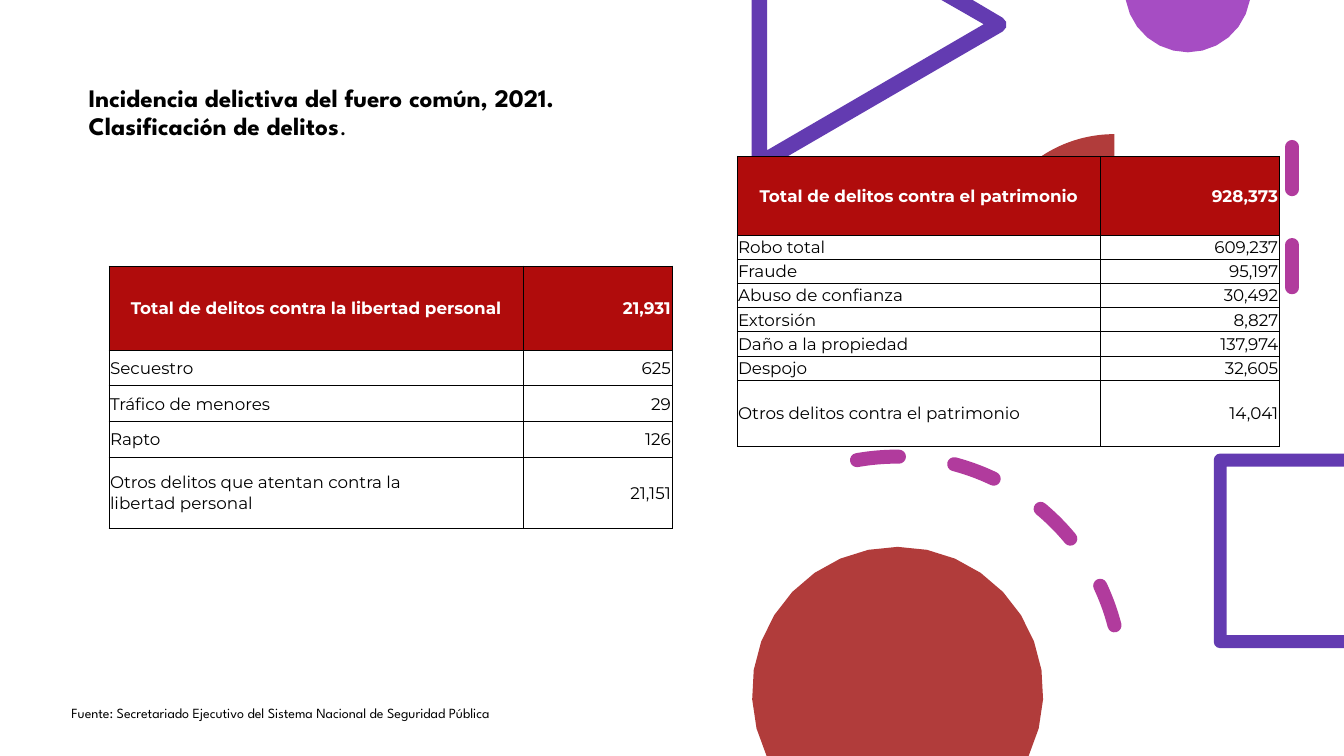
from dataclasses import dataclass
from math import cos, radians, sin

from lxml import etree
from pptx import Presentation
from pptx import util as u
from pptx.dml.color import RGBColor
from pptx.enum import dml, shapes, text
from pptx.oxml import parse_xml
from pptx.oxml.ns import nsdecls, qn

LEFT, CENTER, RIGHT = text.PP_ALIGN.LEFT, text.PP_ALIGN.CENTER, text.PP_ALIGN.RIGHT
NO_BREAK_SPACE = chr(160)


@dataclass(frozen=True)
class Theme:
    black: str = "000000"
    white: str = "FFFFFF"
    header: str = "B00C0C"
    red: str = "B13C3B"
    violet: str = "633BB1"
    lilac: str = "A64DC3"
    magenta: str = "B13B9D"
    heading_font: str = "League Spartan"
    table_font: str = "Montserrat"
    title_size: float = 18
    table_size: float = 12
    source_size: float = 10
    border: float = 0.5
    dash: float = 10


def write(paragraph, content, *, font, size, color, bold=False, align=LEFT):
    paragraph.alignment = align
    run = paragraph.add_run()
    run.text = content
    run.font.name = font
    run.font.size = u.Pt(size)
    run.font.bold = bold
    run.font.color.rgb = RGBColor.from_string(color)


def arc_points(cx, cy, radius, start, end, steps=3):
    angles = [radians(start + (end - start) * i / steps) for i in range(steps + 1)]
    return [(cx + radius * cos(a), cy + radius * sin(a)) for a in angles]


class Page:
    def __init__(self, slide, theme):
        self.slide = slide
        self.theme = theme

    def fill(self, shape, color):
        shape.shadow.inherit = False
        shape.fill.solid()
        shape.fill.fore_color.rgb = RGBColor.from_string(color)
        shape.line.fill.background()

    def outline(self, points, color):
        corners = [(u.Pt(x), u.Pt(y)) for x, y in points]
        builder = self.slide.shapes.build_freeform(*corners[0])
        builder.add_line_segments(corners[1:], close=True)
        self.fill(builder.convert_to_shape(), color)

    def preset(self, kind, left, top, size, rotation):
        shape = self.slide.shapes.add_shape(
            kind, u.Pt(left), u.Pt(top), u.Pt(size), u.Pt(size))
        shape.rotation = rotation
        return shape

    def block_arc(self, left, top, size, rotation, color):
        self.fill(self.preset(shapes.MSO_SHAPE.BLOCK_ARC, left, top, size, rotation), color)

    def dash(self, line):
        line.color.rgb = RGBColor.from_string(self.theme.magenta)
        line.width = u.Pt(self.theme.dash)
        line.dash_style = dml.MSO_LINE.DASH
        line._get_or_add_ln().set("cap", "rnd")

    def dashed_arc(self, left, top, size, rotation):
        curve = self.preset(shapes.MSO_SHAPE.ARC, left, top, size, rotation)
        curve.shadow.inherit = False
        curve.fill.background()
        self.dash(curve.line)

    def dashed_line(self, x1, y1, x2, y2):
        line = self.slide.shapes.add_connector(
            shapes.MSO_CONNECTOR.STRAIGHT, u.Pt(x1), u.Pt(y1), u.Pt(x2), u.Pt(y2))
        self.dash(line.line)
        etree.SubElement(line._element.spPr, qn("a:effectLst"))

    def text_box(self, left, top, width, height, lines, size, spacing=1.0,
                 anchor=text.MSO_ANCHOR.TOP):
        frame = self.slide.shapes.add_textbox(
            u.Pt(left), u.Pt(top), u.Pt(width), u.Pt(height)).text_frame
        frame.word_wrap = True
        frame.vertical_anchor = anchor
        for index, runs in enumerate(lines):
            paragraph = frame.add_paragraph() if index else frame.paragraphs[0]
            paragraph.line_spacing = spacing
            for content, bold in runs:
                write(paragraph, content, font=self.theme.heading_font, size=size,
                      color=self.theme.black, bold=bold)

    def cell(self, cell, content, is_header, align):
        theme = self.theme
        cell.vertical_anchor = text.MSO_ANCHOR.MIDDLE
        cell.margin_left = cell.margin_right = cell.margin_top = u.Pt(0.7)
        cell.margin_bottom = u.Pt(0)
        cell.fill.solid()
        cell.fill.fore_color.rgb = RGBColor.from_string(
            theme.header if is_header else theme.white)
        properties = cell._tc.get_or_add_tcPr()
        for index, side in enumerate("LRTB"):
            properties.insert(index, parse_xml(
                f'<a:ln{side} {nsdecls("a")} w="{u.Pt(theme.border)}"><a:solidFill>'
                f'<a:srgbClr val="{theme.black}"/></a:solidFill></a:ln{side}>'))
        write(cell.text_frame.paragraphs[0], content, font=theme.table_font,
              size=theme.table_size, color=theme.white if is_header else theme.black,
              bold=is_header, align=align)

    def table(self, left, top, widths, heights, rows):
        table = self.slide.shapes.add_table(
            len(rows), len(widths), u.Pt(left), u.Pt(top),
            u.Pt(sum(widths)), u.Pt(sum(heights))).table
        table.horz_banding = False
        for column, width in zip(table.columns, widths):
            column.width = u.Pt(width)
        for index, (row, height, (crime, count)) in enumerate(
                zip(table.rows, heights, rows)):
            row.height = u.Pt(height)
            is_header = index == 0
            self.cell(row.cells[0], crime, is_header, CENTER if is_header else LEFT)
            self.cell(row.cells[1], count, is_header, RIGHT)


LIBERTY = [
    ("Total de delitos contra la libertad personal", "21,931"),
    ("Secuestro", "625"),
    ("Tráfico de menores", "29"),
    ("Rapto", "126"),
    (f"Otros delitos que{NO_BREAK_SPACE}atentan contra la libertad{NO_BREAK_SPACE}personal",
     "21,151"),
]
PROPERTY = [
    ("Total de delitos contra el patrimonio", "928,373"),
    ("Robo total", "609,237"),
    ("Fraude", "95,197"),
    ("Abuso de confianza", "30,492"),
    ("Extorsión", "8,827"),
    ("Daño a la propiedad", "137,974"),
    ("Despojo", "32,605"),
    ("Otros delitos contra el patrimonio", "14,041"),
]
TRIANGLE = [
    (537, 0), (548, 0), (548, 107.3), (702.7, 17.3), (672.5, 0), (694.8, 0),
    *arc_points(713.5, 17.6, 5.6, -60, 60),
    *arc_points(542.5, 117, 5.5, 60, 180),
]
SQUARE = [
    *arc_points(871.5, 328.5, 4.5, 180, 270),
    (960, 324), (960, 333.4), (876.2, 333.4), (876.2, 453.6), (960, 453.6), (960, 463),
    *arc_points(871.5, 458.5, 4.5, 90, 180),
]


def main():
    deck = Presentation()
    deck.slide_width, deck.slide_height = u.Pt(960), u.Pt(540)
    theme = Theme()
    page = Page(deck.slides.add_slide(deck.slide_layouts[6]), theme)

    page.outline(arc_points(848.5, -7.6, 45, 9.7, 170.3, steps=12), theme.lilac)
    page.block_arc(702, 95.8, 188, 270, theme.red)
    page.outline(TRIANGLE, theme.violet)
    page.dashed_line(923, 105, 923, 230.4)
    page.outline(SQUARE, theme.violet)
    page.dashed_arc(479.5, 326.2, 321.8, 349.9)
    page.outline(arc_points(641.2, 494.6, 104, 154.1, 385.9, steps=20), theme.red)

    page.table(77.9, 190, [296, 106], [60] + [25.5] * 3 + [51], LIBERTY)
    page.table(526.5, 111.6, [259.6, 127.6], [56.2] + [17.3] * 6 + [47.4], PROPERTY)

    page.text_box(56.2, 57.6, 470, 46.8, [
        [("Incidencia delictiva del fuero común, 2021.", True)],
        [("Clasificación de delitos", True), (".", False)],
    ], theme.title_size, spacing=0.9, anchor=text.MSO_ANCHOR.MIDDLE)
    page.text_box(43.9, 499.7, 480, 19.4, [
        [("Fuente: Secretariado Ejecutivo del Sistema Nacional de Seguridad Pública", False)],
    ], theme.source_size)
    deck.save("out.pptx")


if __name__ == "__main__":
    main()
